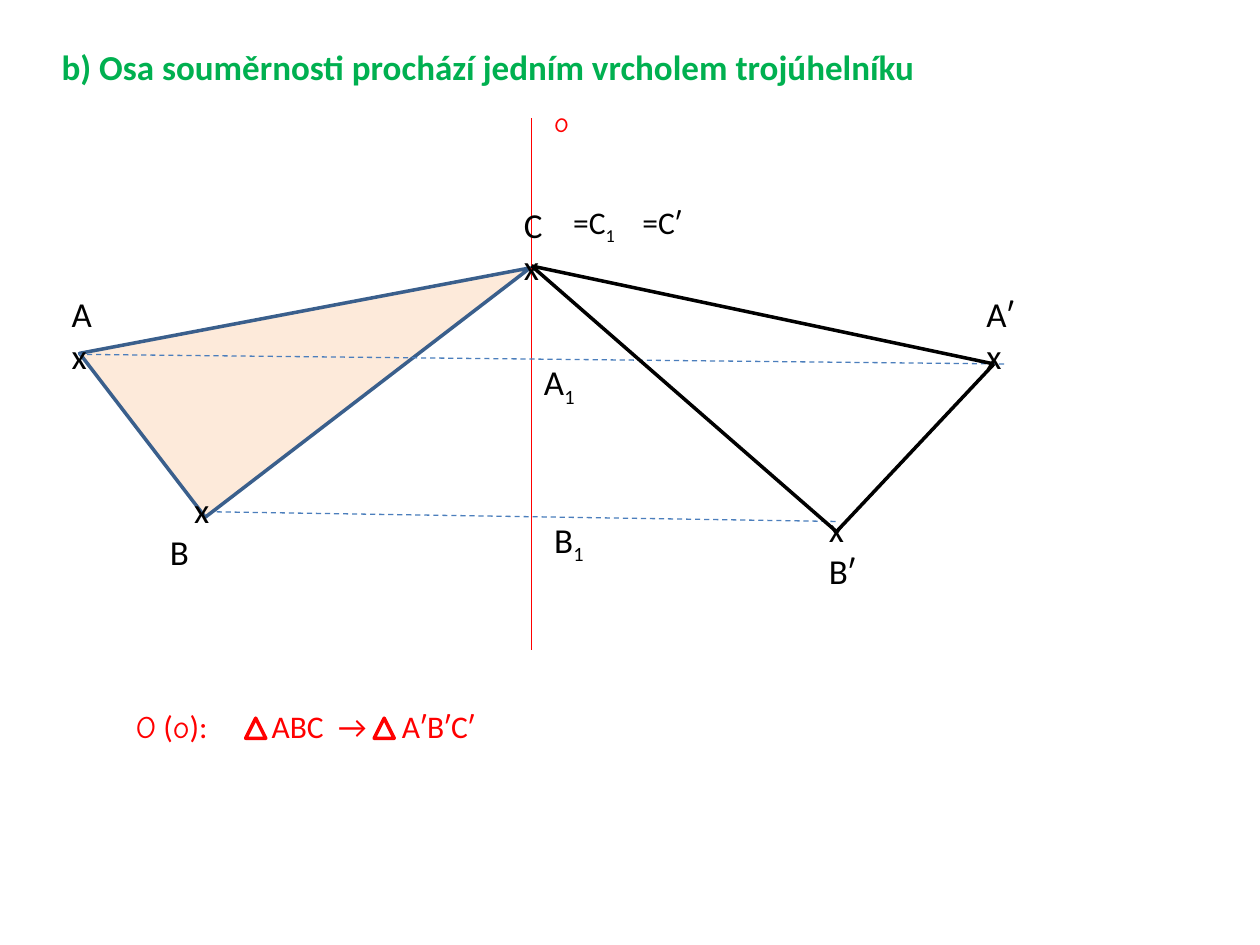
"""Build the slide on axial symmetry with the axis through one triangle vertex."""
from lxml.etree import SubElement
from pptx import Presentation
from pptx.dml.color import RGBColor
from pptx.enum.dml import MSO_LINE
from pptx.enum.shapes import MSO_CONNECTOR, MSO_SHAPE
from pptx.enum.text import MSO_ANCHOR, MSO_AUTO_SIZE, PP_ALIGN
from pptx.oxml import parse_xml
from pptx.oxml.ns import nsdecls, qn
from pptx.util import Pt

COLORS = {"title": "00B050", "red": "FF0000", "black": "000000", "white": "FFFFFF",
          "guide": "4B7EBC", "edge": "3A5F8C", "peach": "FDEADA"}
RGB = {k: RGBColor.from_string(v) for k, v in COLORS.items()}

prs = Presentation()
prs.slide_width, prs.slide_height = Pt(720), Pt(540)
s = prs.slides.add_slide(prs.slide_layouts[5])


def add_line(start, end, color, width, dash=None):
    """Draw a straight line between two points."""
    ln = s.shapes.add_connector(MSO_CONNECTOR.STRAIGHT, *map(Pt, start + end))
    ln.line.color.rgb, ln.line.width = RGB[color], Pt(width)
    if dash:
        ln.line.dash_style = dash
    SubElement(ln._element.spPr, qn("a:effectLst"))


def add_text(box, lines, size, color="black", font="Calibri", wrap=False):
    """Add a text box; an underscore in a line starts a subscript."""
    tf = s.shapes.add_textbox(*map(Pt, box)).text_frame
    tf.word_wrap = wrap
    for i, line in enumerate(lines):
        p = tf.add_paragraph() if i else tf.paragraphs[0]
        p.font.size, p.font.name, p.font.color.rgb = Pt(size), font, RGB[color]
        for j, part in enumerate(line.split("_")):
            r = p.add_run()
            r.text = part
            if j:
                r._r.get_or_add_rPr().set("baseline", "-25000")
    return tf


title = s.shapes.title
title.left, title.top, title.width, title.height = Pt(28), Pt(22.5), Pt(580), Pt(31.5)
tf = title.text_frame
tf.text = "b) Osa souměrnosti prochází jedním vrcholem trojúhelníku"
tf.auto_size, tf.vertical_anchor, tf.word_wrap = MSO_AUTO_SIZE.NONE, MSO_ANCHOR.TOP, True
p = tf.paragraphs[0]
p.alignment = PP_ALIGN.LEFT
p.font.size, p.font.name, p.font.bold = Pt(20), "Calibri", True
p.font.color.rgb = RGB["title"]

for x, y, w, h, angle, apex, fill, edge in [
    (115.2, 60.5, 118, 234, 52.5, 1, "peach", "edge"),
    (140.4, 410.4, 11.5, 11.5, 0, 0.5, "white", "red"),
    (213.8, 410.4, 11.5, 11.5, 0, 0.5, "white", "red"),
]:
    sp = s.shapes.add_shape(MSO_SHAPE.ISOSCELES_TRIANGLE, Pt(x), Pt(y), Pt(w), Pt(h))
    sp.adjustments[0], sp.rotation = apex, angle
    sp.shadow.inherit = False
    sp.fill.solid()
    sp.fill.fore_color.rgb = RGB[fill]
    sp.line.color.rgb, sp.line.width = RGB[edge], Pt(2)

add_line((303.8, 67.5), (303.8, 371.5), "red", 0.75)
add_line((123.8, 292.5), (478, 298), "guide", 0.75, MSO_LINE.DASH)
add_line((44.6, 202.5), (574, 208), "guide", 0.75, MSO_LINE.DASH)

for box, lines, size in [
    ((33.8, 163.4, 26, 55.7), ["A", "x"], 20),
    ((292.3, 112.5, 25.5, 55.7), ["C", "x"], 20),
    ((556.6, 163.4, 32, 55.7), ["Aʹ", "x"], 20),
    ((466.6, 286.6, 30.5, 55.7), ["x", "Bʹ"], 20),
    ((360, 112.5, 38, 29), ["=Cʹ"], 18),
    ((320.4, 112.5, 39.5, 29), ["=C_1"], 18),
    ((303.8, 202.5, 33, 31.5), ["A_1"], 20),
    ((309.6, 292.5, 32.5, 31.5), ["B_1"], 20),
]:
    add_text(box, lines, size)
tf = add_text((90, 275.8, 36.7, 55.7), ["x", "B"], 20, wrap=True)
tf.paragraphs[0].alignment = PP_ALIGN.RIGHT
add_text((309.6, 56.2, 25, 26.5), ["o"], 16, "red", "Comic Neue")

tf = add_text((70.6, 400.3, 214, 29), ["O"], 18, "red", wrap=True)
p = tf.paragraphs[0]
for text in [" (", "o", "):\tABC\t→\tAʹBʹCʹ"]:
    p.add_run().text = text
for r in p.runs[0], p.runs[2]:
    r.font.name = "Comic Neue"
tabs = "".join(f'<a:tab pos="{Pt(x)}" algn="l"/>' for x in (77.5, 115.5, 152))
p._p.get_or_add_pPr().insert(0, parse_xml(f'<a:tabLst {nsdecls("a")}>{tabs}</a:tabLst>'))

image_a, image_b, vertex_c = (568, 208), (478, 303.8), (303.8, 152)
for start, end in [(image_a, image_b), (vertex_c, image_a), (vertex_c, image_b)]:
    add_line(start, end, "black", 2)

prs.save("out.pptx")
